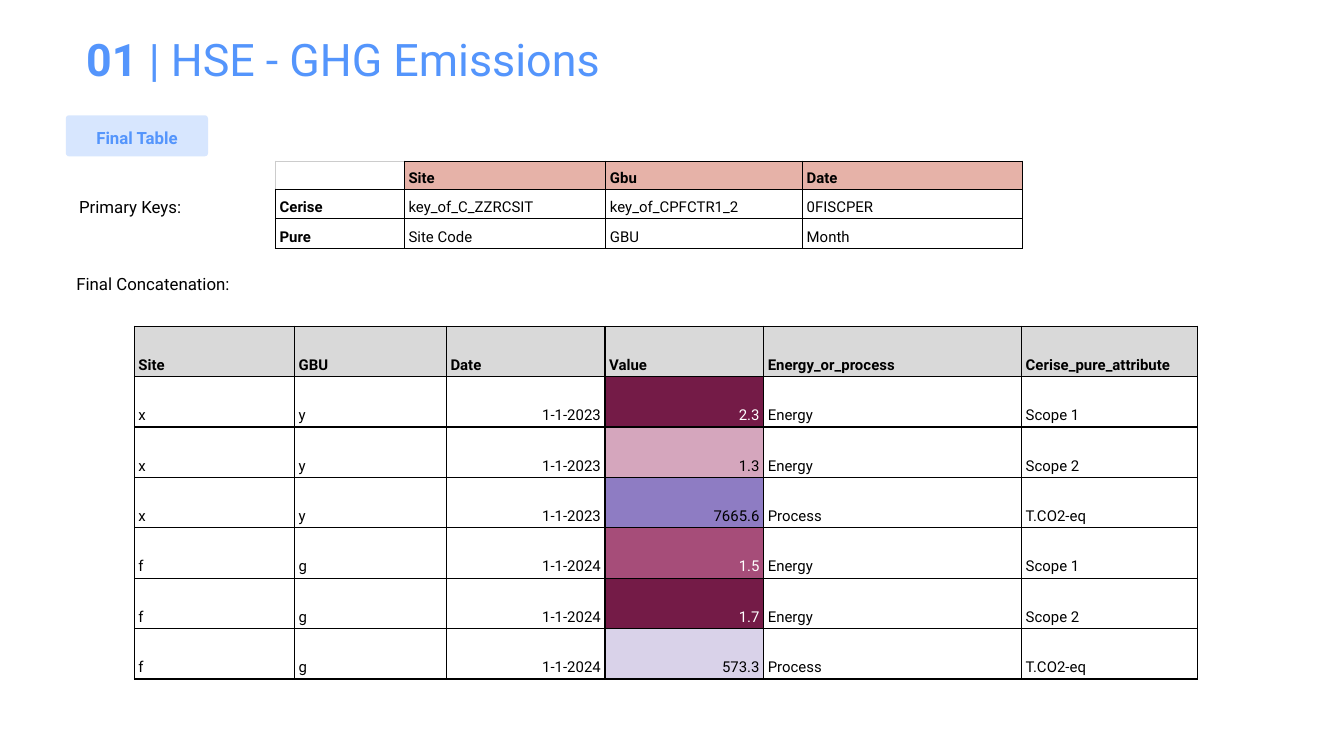
from dataclasses import dataclass

from lxml.etree import SubElement
from pptx import Presentation
from pptx.dml.color import RGBColor as Rgb
from pptx.enum.shapes import MSO_SHAPE as Shape
from pptx.enum.text import MSO_ANCHOR as Anchor, MSO_AUTO_SIZE as Fit, PP_ALIGN as Align
from pptx.oxml.ns import qn
from pptx.util import Pt


@dataclass(frozen=True)
class Theme:
    """Colours, font and type sizes of the deck."""
    font: str = "Roboto"
    title_size: float = 24
    label_size: float = 9
    cell_size: int = 8
    accent: str = "5495FC"
    ink: str = "000000"
    paper: str = "FFFFFF"
    header: str = "D9D9D9"
    key_header: str = "E6B2A8"
    faint: str = "CCCCCC"
    plum: str = "741B47"
    berry: str = "A64D79"
    pink: str = "D5A6BD"
    violet: str = "8E7CC3"
    lilac: str = "D9D2E9"


def apply(target, values):
    """Set each attribute named in values on the target."""
    for name, value in values.items():
        setattr(target, name, value)


class Page:
    """Draws themed elements on one slide."""

    def __init__(self, slide, theme):
        self.slide = slide
        self.theme = theme

    def add_span(self, para, text, size, color, bold=False):
        span = para.add_run()
        span.text = text
        apply(span.font, {"name": self.theme.font, "size": Pt(size), "bold": bold})
        span.font.color.rgb = Rgb.from_string(color)

    def frame(self, box, anchor, fit=Fit.NONE, inset=7.2):
        sides = ("left", "top", "right", "bottom")
        apply(box.text_frame, {f"margin_{side}": Pt(inset) for side in sides})
        apply(box.text_frame, {"word_wrap": True, "auto_size": fit, "vertical_anchor": anchor})
        return box.text_frame.paragraphs[0]

    def title(self, number, text, left, top, width, height):
        box = self.slide.shapes.title
        apply(box, {"left": Pt(left), "top": Pt(top), "width": Pt(width), "height": Pt(height)})
        para = self.frame(box, Anchor.MIDDLE)
        para.alignment = Align.LEFT
        self.add_span(para, number, self.theme.title_size, self.theme.accent, True)
        self.add_span(para, text, self.theme.title_size, self.theme.accent)

    def tag(self, text, left, top, width, height):
        box = self.slide.shapes.add_shape(
            Shape.ROUNDED_RECTANGLE, Pt(left), Pt(top), Pt(width), Pt(height))
        box.adjustments[0] = 0.08
        box.shadow.inherit = False
        box.line.fill.background()
        box.fill.solid()
        box.fill.fore_color.rgb = Rgb.from_string(self.theme.accent)
        color = next(box._element.spPr.iter(qn("a:srgbClr")))
        SubElement(color, qn("a:alpha"), val="23000")
        para = self.frame(box, Anchor.MIDDLE)
        apply(para, {"alignment": Align.CENTER, "line_spacing": 1.15})
        self.add_span(para, text, self.theme.label_size, self.theme.accent, True)

    def label(self, text, left, top, width, height):
        box = self.slide.shapes.add_textbox(Pt(left), Pt(top), Pt(width), Pt(height))
        para = self.frame(box, Anchor.TOP, Fit.SHAPE_TO_FIT_TEXT)
        self.add_span(para, text, self.theme.label_size, self.theme.ink)

    def border(self, cell, colors):
        props = cell._tc.get_or_add_tcPr()
        for side, color in zip("LRTB", colors):
            line = SubElement(props, qn(f"a:ln{side}"), w=str(Pt(0.75)))
            SubElement(SubElement(line, qn("a:solidFill")), qn("a:srgbClr"), val=color)

    def cell(self, cell, text, fill, color, bold, align):
        edge = self.theme.ink if text else self.theme.faint
        self.border(cell, (edge, self.theme.ink, edge, self.theme.ink))
        cell.fill.solid()
        cell.fill.fore_color.rgb = Rgb.from_string(fill)
        apply(cell, {"margin_left": Pt(2.2), "margin_right": Pt(2.2), "margin_top": Pt(1.4),
                     "margin_bottom": Pt(1.4), "vertical_anchor": Anchor.BOTTOM})
        para = cell.text_frame.paragraphs[0]
        apply(para, {"alignment": align, "line_spacing": 1.15})
        if text:
            self.add_span(para, text, self.theme.cell_size, color, bold)
        else:
            para._p.get_or_add_endParaRPr().set("sz", str(self.theme.cell_size * 100))

    def table(self, rows, left, top, widths, heights, style):
        grid = self.slide.shapes.add_table(
            len(rows), len(widths), Pt(left), Pt(top), Pt(sum(widths)), Pt(sum(heights))).table
        apply(grid, {"first_row": False, "horz_banding": False})
        for column, width in zip(grid.columns, widths):
            column.width = Pt(width)
        for row, height in zip(grid.rows, heights):
            row.height = Pt(height)
        for r, texts in enumerate(rows):
            for c, text in enumerate(texts):
                self.cell(grid.cell(r, c), text, **style(r, c))

    def key_table(self, rows, left, top, widths, heights):
        def style(r, c):
            fill = self.theme.key_header if r == 0 and c else self.theme.paper
            return {"fill": fill, "color": self.theme.ink,
                    "bold": r == 0 or c == 0, "align": Align.LEFT}

        self.table(rows, left, top, widths, heights, style)

    def value_table(self, rows, shades, left, top, widths, height):
        def style(r, c):
            fill, color = self.theme.paper, self.theme.ink
            if r == 0:
                fill = self.theme.header
            elif c == 3:
                fill = shades[r - 1]
                if fill in (self.theme.plum, self.theme.berry):
                    color = self.theme.paper
            align = Align.RIGHT if r and c in (2, 3) else Align.LEFT
            return {"fill": fill, "color": color, "bold": r == 0, "align": align}

        self.table(rows, left, top, widths, [height] * len(rows), style)


def main():
    """Build the emissions slide and save it."""
    theme = Theme()
    deck = Presentation()
    apply(deck, {"slide_width": Pt(720), "slide_height": Pt(405)})
    page = Page(deck.slides.add_slide(deck.slide_layouts[5]), theme)

    page.title("01 ", "| HSE - GHG Emissions", 39, 8, 651, 47)
    page.tag("Final Table", 35.3, 61.8, 76.2, 22)
    page.label("Primary Keys:", 35.3, 100, 76.2, 25)

    kinds = [("Energy", "Scope 1"), ("Energy", "Scope 2"), ("Process", "T.CO2-eq")]
    groups = [("x", "y", "1-1-2023", ("2.3", "1.3", "7665.6")),
              ("f", "g", "1-1-2024", ("1.5", "1.7", "573.3"))]
    records = [(site, unit, date, value, *kind)
               for site, unit, date, values in groups
               for value, kind in zip(values, kinds)]
    header = ("Site", "GBU", "Date", "Value", "Energy_or_process", "Cerise_pure_attribute")
    shades = [theme.plum, theme.pink, theme.violet, theme.berry, theme.plum, theme.lilac]
    page.value_table([header, *records], shades, 72, 174.8,
                     [85.8, 81.4, 85, 85, 138.2, 94.3], 27)

    keys = [("", "Site", "Gbu", "Date"),
            ("Cerise", "key_of_C_ZZRCSIT", "key_of_CPFCTR1_2", "0FISCPER"),
            ("Pure", "Site Code", "GBU", "Month")]
    page.key_table(keys, 147.6, 86.4, [69.1, 107.9, 105.4, 117.8], [15, 15.8, 15.8])
    page.label("Final Concatenation:", 33.8, 141.1, 129, 25)

    deck.save("out.pptx")


if __name__ == "__main__":
    main()
